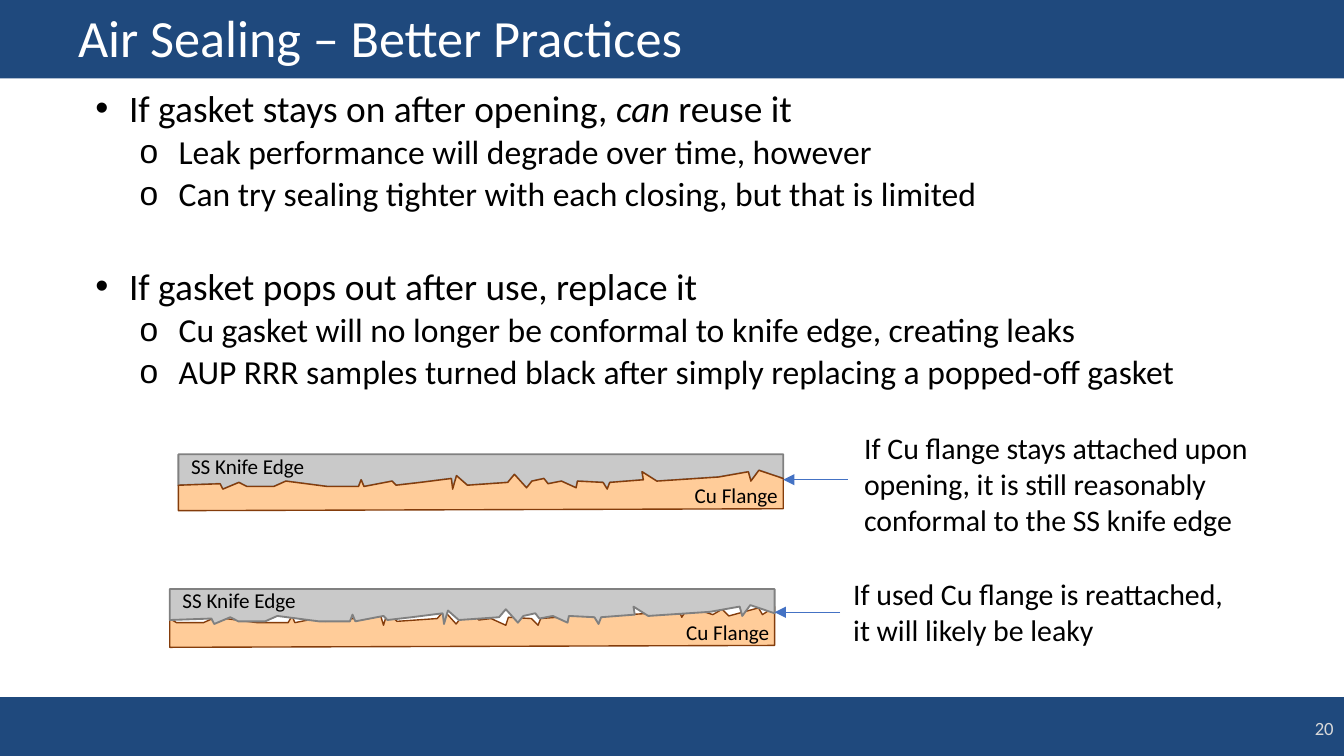
import lxml.etree
import pptx
import pptx.dml.color
import pptx.enum.shapes
import pptx.enum.text
import pptx.oxml.ns
import pptx.util

Pt = pptx.util.Pt
qn = pptx.oxml.ns.qn
FONT = "Calibri"
COLORS = {
    "navy": "1F497D", "white": "FFFFFF", "black": "000000", "number": "D9D9D9",
    "copper": "FFCC99", "copper_edge": "843C0B",
    "steel": "C9C9C9", "steel_edge": "808080", "arrow": "4472C4",
}
SLIDE_WIDTH, SLIDE_HEIGHT = 720, 405
PLATE_WIDTH = 324
KNIFE_PROFILE = [
    (0, 16.6), (22.3, 15.8), (23.8, 18.7), (32.4, 15.1), (36.7, 17.3), (51.1, 17.3),
    (57.6, 14.4), (79.9, 17.3), (96.5, 17.3), (97.9, 13.7), (99.4, 17.3), (114.5, 14.4),
    (116.6, 16.6), (129.6, 15.1), (146.2, 13), (146.9, 18.7), (149, 11.5), (154.8, 16.6),
    (176.4, 15.1), (180, 10.8), (186.5, 18), (189.4, 14.4), (195.8, 13), (198, 15.8),
    (205.2, 14.4), (213.1, 18), (213.8, 14.4), (227.5, 15.1), (229.7, 18.7), (231.1, 15.1),
    (249.1, 13.7), (248.4, 9.4), (256.3, 14.4), (289.4, 12.2), (305.3, 9.4), (306.7, 14.4),
    (311, 8.6), (PLATE_WIDTH, 13),
]
WORN_PROFILE = [
    (0, 15.8), (3.6, 18), (18, 18), (24.5, 15.1), (46.8, 18), (63.4, 18), (65.5, 14.4),
    (67, 18), (81.4, 15.1), (83.5, 17.3), (113, 14.4), (114.5, 19.4), (116.6, 12.2),
    (121.7, 17.3), (143.3, 15.8), (146.9, 11.5), (153.4, 18.7), (156.2, 15.1), (162.7, 13.7),
    (165.6, 16.6), (172.1, 15.8), (180, 19.4), (181.4, 15.1), (193.7, 15.8), (197.3, 19.4),
    (198.7, 15.8), (216.7, 14.4), (216, 10.1), (223.9, 15.1), (257, 13), (272.2, 10.1),
    (274.3, 15.1), (277.9, 9.4), (290.9, 13.7), (295.9, 10.8), (299.5, 14.4), (315.4, 10.1),
    (317.5, 13.7), (PLATE_WIDTH, 9.4),
]
BULLETS = [
    (0, 6, ["If gasket stays on after opening, ", "can", " reuse it"]),
    (1, 3, ["Leak performance will degrade over time, however"]),
    (1, 3, ["Can try sealing tighter with each closing, but that is limited"]),
    (0, 28.8, ["If gasket pops out after use, replace it"]),
    (1, 3, ["Cu gasket will no longer be conformal to knife edge, creating leaks"]),
    (1, 3, ["AUP RRR samples turned black after simply replacing a popped-off gasket"]),
]
LEVELS = [("•", 18, -18, 20), ("o", 44.6, -20.9, 18)]


def rgb(name):
    return pptx.dml.color.RGBColor.from_string(COLORS[name])


def format_font(font, size, color):
    font.name = FONT
    font.size = Pt(size)
    font.color.rgb = rgb(color)


def place(shape, left, top, width, height):
    shape.left, shape.top = Pt(left), Pt(top)
    shape.width, shape.height = Pt(width), Pt(height)


def paint(shape, fill, line=None, line_width=1):
    shape.shadow.inherit = False
    shape.fill.solid()
    shape.fill.fore_color.rgb = rgb(fill)
    if line:
        shape.line.color.rgb = rgb(line)
        shape.line.width = Pt(line_width)
    else:
        shape.line.fill.background()


def add_bar(slide, top, height):
    bar = slide.shapes.add_shape(
        pptx.enum.shapes.MSO_SHAPE.RECTANGLE, 0, Pt(top), Pt(SLIDE_WIDTH), Pt(height))
    paint(bar, "navy")
    slide.shapes._spTree.insert(2, bar._element)


def add_text(slide, text, box, size, color="black", wrap=True):
    shape = slide.shapes.add_textbox(*[Pt(length) for length in box])
    frame = shape.text_frame
    frame.word_wrap = wrap
    frame.text = text
    format_font(frame.paragraphs[0].runs[0].font, size, color)
    return shape


def fill_title(slide):
    title = slide.shapes.title
    place(title, 34.6, 1.4, 659, 40.3)
    frame = title.text_frame
    frame.text = "Air Sealing – Better Practices"
    frame.auto_size = pptx.enum.text.MSO_AUTO_SIZE.NONE
    frame.vertical_anchor = pptx.enum.text.MSO_ANCHOR.MIDDLE
    paragraph = frame.paragraphs[0]
    paragraph.alignment = pptx.enum.text.PP_ALIGN.LEFT
    paragraph.line_spacing = 0.9
    format_font(paragraph.runs[0].font, 28, "white")


def fill_bullets(slide):
    body = slide.placeholders[1]
    place(body, 36.7, 44.6, 611.3, 170.6)
    frame = body.text_frame
    frame.auto_size = pptx.enum.text.MSO_AUTO_SIZE.NONE
    frame.vertical_anchor = pptx.enum.text.MSO_ANCHOR.TOP
    frame.margin_left = frame.margin_right = Pt(14.4)
    for index, (level, space, parts) in enumerate(BULLETS):
        paragraph = frame.add_paragraph() if index else frame.paragraphs[0]
        character, margin, indent, size = LEVELS[level]
        paragraph.level = level
        paragraph.line_spacing = 0.9
        paragraph.space_before = Pt(space if index else 0)
        properties = paragraph._p.get_or_add_pPr()
        properties.set("marL", str(Pt(margin)))
        properties.set("indent", str(Pt(indent)))
        lxml.etree.SubElement(properties, qn("a:buChar")).set("char", character)
        for part in parts:
            run = paragraph.add_run()
            run.text = part
            format_font(run.font, size, "black")
            run.font.italic = part == "can"


def add_plate(slide, left, top, points, fill, line, line_width):
    corners = [(Pt(left + x), Pt(top + y)) for x, y in points]
    builder = slide.shapes.build_freeform(*corners[0])
    builder.add_line_segments(corners[1:], close=True)
    paint(builder.convert_to_shape(), fill, line, line_width)


def add_knife(slide, left, top):
    points = [(0, 0), *KNIFE_PROFILE, (PLATE_WIDTH, 0)]
    add_plate(slide, left, top, points, "steel", "steel_edge", 1)


def add_flange(slide, left, top, profile, bottom):
    points = [*profile, (PLATE_WIDTH, bottom - 1), (0, bottom)]
    add_plate(slide, left, top, points, "copper", "copper_edge", 0.75)


def add_labels(slide, left, top, flange_top):
    add_text(slide, "SS Knife Edge", (left - 0.3, top - 4.3, 77, 20.9), 11.3, wrap=False)
    add_text(slide, "Cu Flange", (left + 269.5, top + flange_top, 59.8, 20.9), 11.3, wrap=False)


def add_arrow(slide, start, end, y):
    arrow = slide.shapes.add_connector(
        pptx.enum.shapes.MSO_CONNECTOR.STRAIGHT, Pt(start), Pt(y), Pt(end), Pt(y))
    arrow.line.color.rgb = rgb("arrow")
    arrow.line.width = Pt(0.5)
    head = lxml.etree.SubElement(arrow.line._get_or_add_ln(), qn("a:tailEnd"))
    head.set("type", "triangle")
    lxml.etree.SubElement(arrow._element.spPr, qn("a:effectLst"))
    return arrow


def add_attached_seal(slide):
    left, top = 95.6, 243.4
    add_knife(slide, left, top)
    add_flange(slide, left, top, KNIFE_PROFILE, 30.2)
    add_labels(slide, left, top, 11.5)
    add_text(slide, "If Cu flange stays attached upon opening, it is still reasonably "
             "conformal to the SS knife edge", (455.8, 226.8, 229.7, 65.5), 16)
    add_arrow(slide, 454.3, left + PLATE_WIDTH, 257)


def add_reattached_seal(slide):
    left, top = 91, 315.6
    add_flange(slide, left, top, WORN_PROFILE, 31.2)
    add_knife(slide, left, top)
    add_labels(slide, left, top, 12.7)
    callout = add_text(slide, "If used Cu flange is reattached, it will likely be leaky",
                       (450, 305, 221, 46), 16)
    arrow = add_arrow(slide, 450, left + PLATE_WIDTH, 328)
    arrow.begin_connect(callout, 1)


def add_slide_number(slide):
    number = add_text(slide, "20", (686.2, 374.4, 35.3, 31), 10, "number")
    number.text_frame.vertical_anchor = pptx.enum.text.MSO_ANCHOR.MIDDLE
    number.text_frame.paragraphs[0].alignment = pptx.enum.text.PP_ALIGN.RIGHT


def main():
    presentation = pptx.Presentation()
    presentation.slide_width, presentation.slide_height = Pt(SLIDE_WIDTH), Pt(SLIDE_HEIGHT)
    slide = presentation.slides.add_slide(presentation.slide_layouts[1])
    add_bar(slide, 0, 42)
    add_bar(slide, 373.5, 31.5)
    fill_title(slide)
    fill_bullets(slide)
    add_slide_number(slide)
    add_attached_seal(slide)
    add_reattached_seal(slide)
    presentation.save("out.pptx")


if __name__ == "__main__":
    main()
